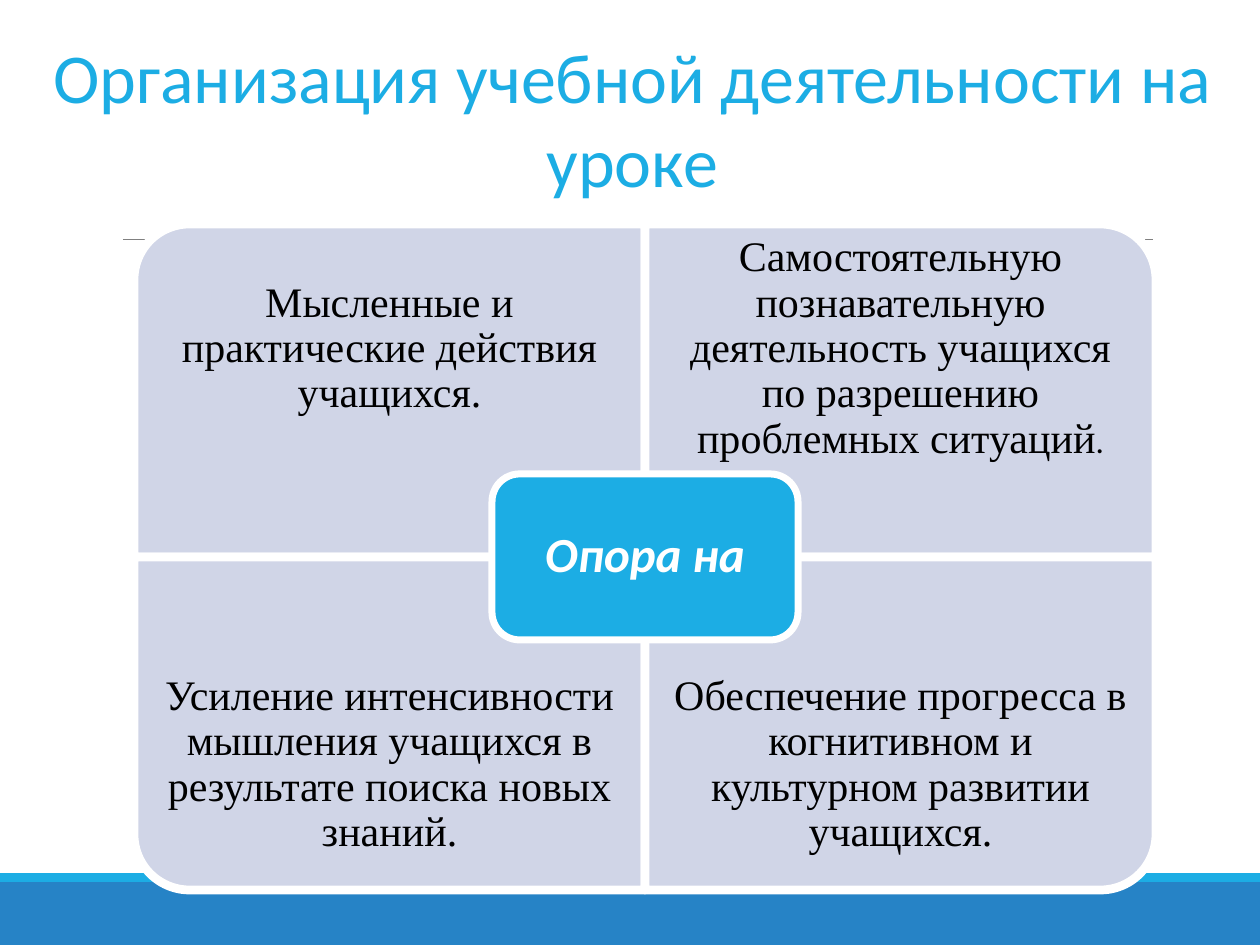
from pptx import Presentation
from pptx.dml.color import RGBColor
from pptx.enum.shapes import MSO_CONNECTOR, MSO_SHAPE
from pptx.enum.text import MSO_ANCHOR, PP_ALIGN
from pptx.oxml.ns import qn
from pptx.util import Emu, Pt
from lxml import etree


def px(n):
    return Emu(round(n * 914400 / 126))


def rgb(h):
    return RGBColor.from_string(h)


prs = Presentation()
prs.slide_width, prs.slide_height = px(1260), px(945)
s = prs.slides.add_slide(prs.slide_layouts[5])

# Footer bands
for top, height, color in [(882, 63, "2683C6"), (873, 9, "1CADE4")]:
    sp = s.shapes.add_shape(MSO_SHAPE.RECTANGLE, 0, px(top), px(1260), px(height))
    sp.shadow.inherit = False
    sp.fill.solid()
    sp.fill.fore_color.rgb = rgb(color)
    sp.line.fill.background()

# Rule under the title
rule = s.shapes.add_connector(MSO_CONNECTOR.STRAIGHT, px(123), px(239), px(1153), px(239))
rule.line.color.rgb = rgb("808080")
rule.line.width = Pt(0.5)
etree.SubElement(rule._element.spPr, qn("a:effectLst"))

# Title
title = s.shapes.title
title.left, title.top, title.width, title.height = px(10), px(26), px(1245), px(183)
title.text_frame.text = "Организация учебной деятельности на уроке"
p = title.text_frame.paragraphs[0]
p.alignment = PP_ALIGN.CENTER
font = p.runs[0].font
font.name, font.size = "Calibri", Pt(40)
font.color.rgb = rgb("1CADE4")

# Four quadrants: column, row, rotation that turns the round corner outwards, text
LEFT, TOP, W, H, TEXT_H = 134, 224, 511, 333, 250
quadrants = [
    (0, 0, 270, "Мысленные и практические действия учащихся."),
    (1, 0, 0, "Самостоятельную познавательную деятельность учащихся "
              "по разрешению проблемных ситуаций"),
    (0, 1, 180, "Усиление интенсивности мышления учащихся в результате поиска новых знаний."),
    (1, 1, 90, "Обеспечение прогресса в когнитивном и культурном развитии учащихся."),
]
for col, row, angle, text in quadrants:
    x, y = LEFT + col * W, TOP + row * H
    w, h = (H, W) if angle % 180 else (W, H)
    sp = s.shapes.add_shape(MSO_SHAPE.ROUND_1_RECTANGLE, px(x + (W - w) / 2),
                            px(y + (H - h) / 2), px(w), px(h))
    sp.rotation = angle
    sp.shadow.inherit = False
    sp.fill.solid()
    sp.fill.fore_color.rgb = rgb("D0D5E7")
    sp.line.color.rgb = rgb("FFFFFF")
    sp.line.width = Pt(5)

    # Upright text in the outer three quarters of the quadrant
    box = s.shapes.add_textbox(px(x), px(y + row * (H - TEXT_H)), px(W), px(TEXT_H))
    tf = box.text_frame
    tf.word_wrap = True
    tf.vertical_anchor = MSO_ANCHOR.MIDDLE
    tf.margin_left = tf.margin_right = tf.margin_top = tf.margin_bottom = px(24)
    tf.text = text
    p = tf.paragraphs[0]
    p.alignment = PP_ALIGN.CENTER
    p.line_spacing = 0.9
    font = p.runs[0].font
    font.name, font.size = "Times New Roman", Pt(24)
    font.color.rgb = rgb("000000")
    if (col, row) == (1, 0):
        r = p.add_run()
        r.text = "."
        r.font.name, r.font.size = "Calibri", Pt(19)
        r.font.color.rgb = rgb("000000")

# Centre label
sp = s.shapes.add_shape(MSO_SHAPE.ROUNDED_RECTANGLE, px(492), px(474), px(306), px(166))
sp.shadow.inherit = False
sp.fill.solid()
sp.fill.fore_color.rgb = rgb("1CADE4")
sp.line.color.rgb = rgb("FFFFFF")
sp.line.width = Pt(4)
tf = sp.text_frame
tf.vertical_anchor = MSO_ANCHOR.MIDDLE
tf.margin_left = tf.margin_right = tf.margin_top = tf.margin_bottom = px(15)
tf.text = "Опора на"
p = tf.paragraphs[0]
p.alignment = PP_ALIGN.CENTER
p.line_spacing = 0.9
font = p.runs[0].font
font.name, font.size = "Calibri", Pt(28)
font.bold = font.italic = True
font.color.rgb = rgb("FFFFFF")

prs.save("out.pptx")
